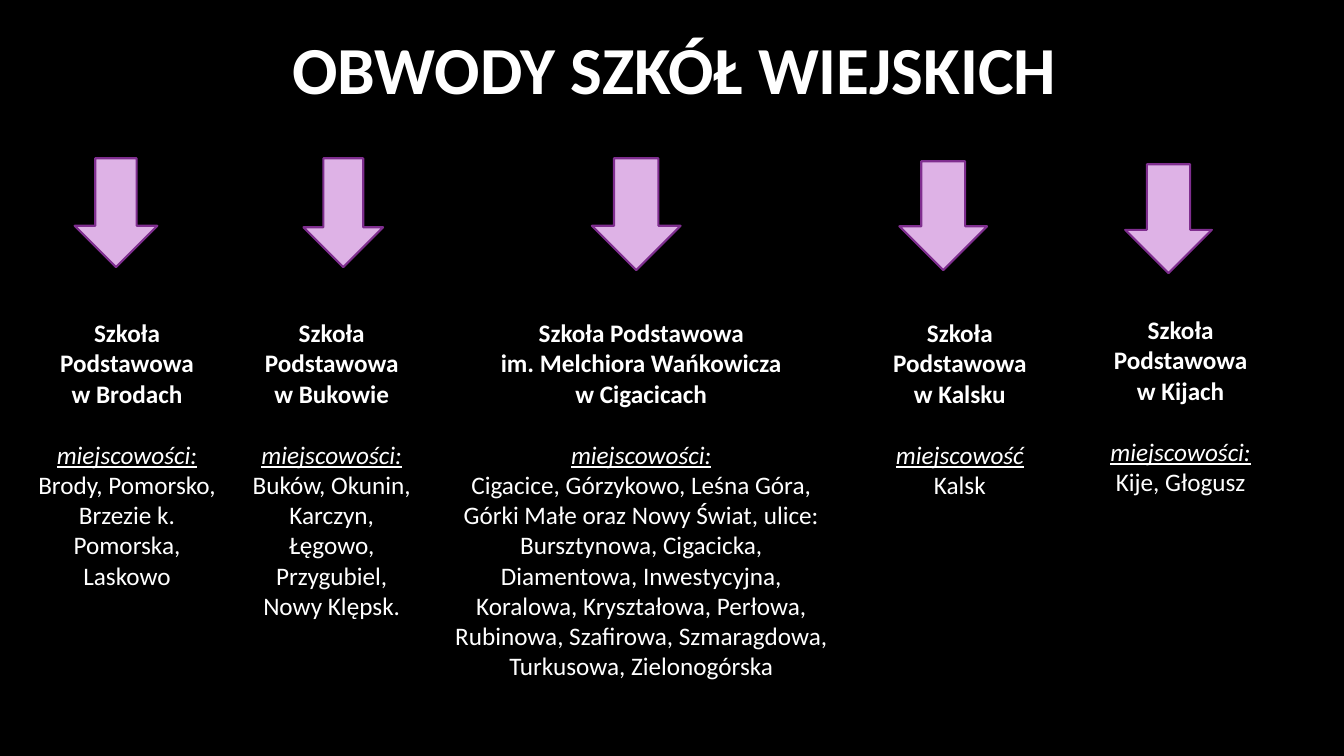
from pptx import Presentation
from pptx.dml.color import RGBColor
from pptx.enum.shapes import MSO_SHAPE
from pptx.enum.text import MSO_ANCHOR, PP_ALIGN
from pptx.util import Inches, Pt

COLORS = {"background": "000000", "text": "FFFFFF", "arrow": "DEB2E6", "outline": "7F2E8F"}
SCHOOL = "Szkoła Podstawowa"

# Arrow box, text box, school name lines, label, places
DISTRICTS = [
    ((0.74, 1.57, 0.82, 1.08), (0.21, 3.1, 2.1, 3.13),
     [SCHOOL, "w Brodach"], "miejscowości:",
     "Brody, Pomorsko, Brzezie k. Pomorska, Laskowo"),
    ((3.01, 1.57, 0.79, 1.08), (2.38, 3.1, 1.82, 3.13),
     [SCHOOL, "w Bukowie"], "miejscowości:",
     "Buków, Okunin, Karczyn, Łęgowo, Przygubiel, Nowy Klępsk."),
    ((5.87, 1.57, 0.88, 1.11), (4.39, 3.1, 3.94, 3.74),
     [SCHOOL, "im. Melchiora Wańkowicza", "w Cigacicach"], "miejscowości:",
     "Cigacice, Górzykowo, Leśna Góra, Górki Małe oraz Nowy Świat, ulice: "
     "Bursztynowa, Cigacicka, Diamentowa, Inwestycyjna, Koralowa, Kryształowa, "
     "Perłowa, Rubinowa, Szafirowa, Szmaragdowa, Turkusowa, Zielonogórska"),
    ((8.92, 1.6, 0.87, 1.08), (8.58, 3.1, 1.88, 1.92),
     [SCHOOL, "w Kalsku"], "miejscowość", "Kalsk"),
    ((11.16, 1.63, 0.86, 1.08), (10.61, 3.07, 2.2, 2.22),
     [SCHOOL, "w Kijach"], "miejscowości:", "Kije, Głogusz"),
]


def color(name):
    return RGBColor.from_string(COLORS[name])


def add_centered_text(box, lines, size):
    """Add a wrapped text box with one centred paragraph per line and return its frame."""
    frame = slide.shapes.add_textbox(*map(Inches, box)).text_frame
    frame.word_wrap = True
    frame.text = "\n".join(lines)
    for paragraph in frame.paragraphs:
        paragraph.alignment = PP_ALIGN.CENTER
        font = paragraph.runs[0].font
        font.name = "Calibri"
        font.size = Pt(size)
        font.bold = True
        font.color.rgb = color("text")
    return frame


presentation = Presentation()
presentation.slide_width = Inches(13.33)
presentation.slide_height = Inches(7.5)
slide = presentation.slides.add_slide(presentation.slide_layouts[6])
slide.background.fill.solid()
slide.background.fill.fore_color.rgb = color("background")

title = add_centered_text((1.15, 0.3, 11.08, 0.75), ["OBWODY SZKÓŁ WIEJSKICH"], 48)
title.vertical_anchor = MSO_ANCHOR.MIDDLE

for arrow_box, text_box, school_lines, label, places in DISTRICTS:
    arrow = slide.shapes.add_shape(MSO_SHAPE.DOWN_ARROW, *map(Inches, arrow_box))
    arrow.shadow.inherit = False
    arrow.fill.solid()
    arrow.fill.fore_color.rgb = color("arrow")
    arrow.line.color.rgb = color("outline")
    arrow.line.width = Pt(1.5)

    frame = add_centered_text(text_box, [*school_lines, label, places], 18)
    label_paragraph, places_paragraph = frame.paragraphs[-2:]
    label_paragraph.space_before = Pt(22)
    label_font = label_paragraph.runs[0].font
    label_font.bold = False
    label_font.italic = True
    label_font.underline = True
    places_paragraph.runs[0].font.bold = False

presentation.save("out.pptx")
